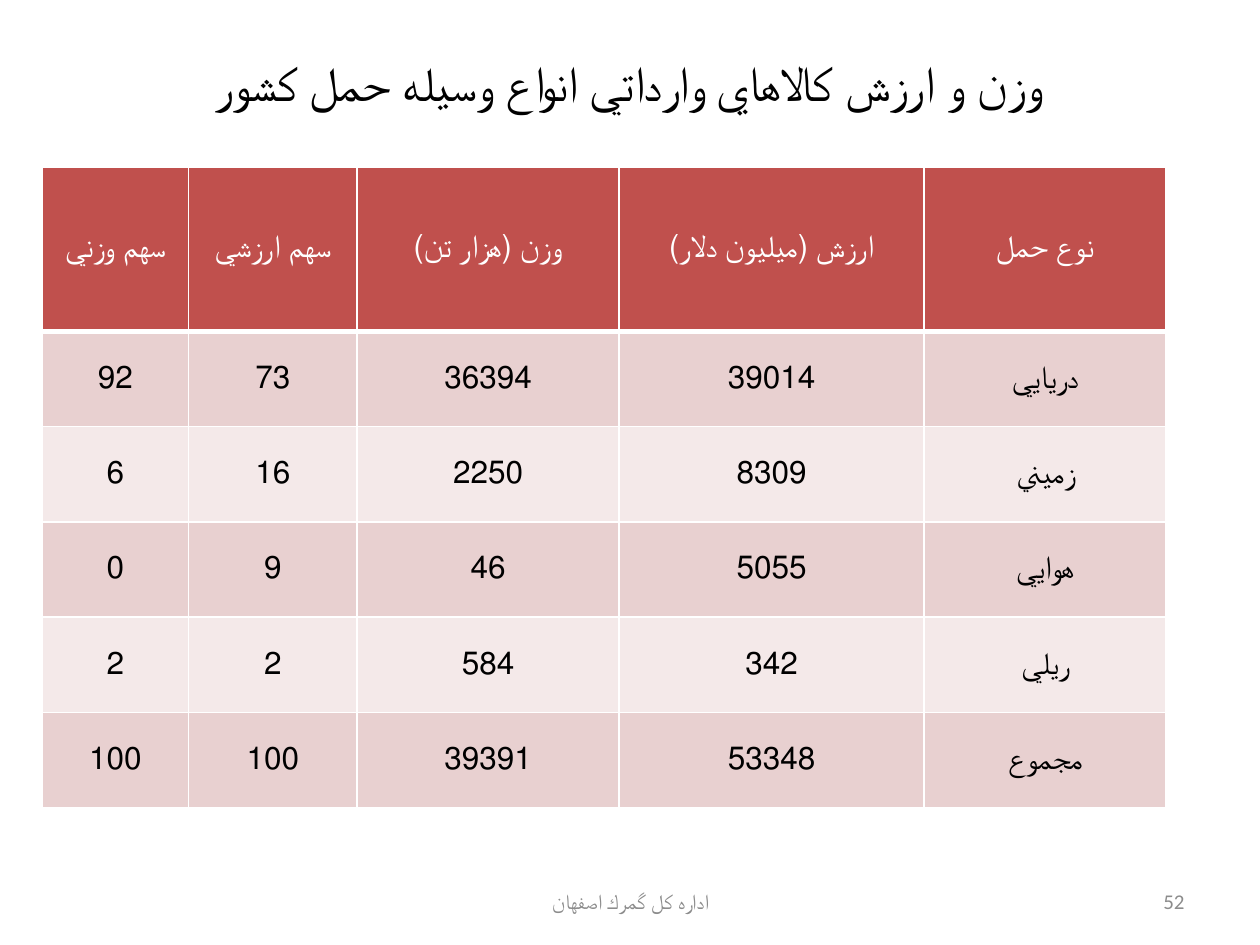
from dataclasses import dataclass

from lxml import etree
from pptx import Presentation
from pptx.dml.color import RGBColor
from pptx.enum.text import MSO_ANCHOR, PP_ALIGN
from pptx.oxml.ns import qn
from pptx.util import Cm, Pt

CENTER, RIGHT = PP_ALIGN.CENTER, PP_ALIGN.RIGHT
MIDDLE = MSO_ANCHOR.MIDDLE

COLORS = {
    "title": "000000",
    "body": "000000",
    "header_text": "FFFFFF",
    "header": "C0504D",
    "odd_row": "E8D0D0",
    "even_row": "F4E9E9",
    "border": "FFFFFF",
    "footer": "8C8C8C",
}


@dataclass
class TextStyle:
    font: str
    size: int
    color: str
    align: PP_ALIGN = CENTER
    rtl: bool = False
    line_spacing: float = 1.0


@dataclass
class Label:
    text: str
    left: float
    top: float
    width: float
    height: float
    style: TextStyle


TITLE_STYLE = TextStyle("Calibri", 28, "title", rtl=True)
FOOTER_STYLE = TextStyle("Calibri", 12, "footer")
NUMBER_STYLE = TextStyle("Calibri", 12, "footer", RIGHT)
HEADER_STYLE = TextStyle("Arial", 18, "header_text", rtl=True, line_spacing=0.85)
BODY_STYLE = TextStyle("Arial", 18, "body", rtl=True)

LABELS = [
    Label("وزن و ارزش كالاهاي وارداتي انواع وسيله حمل كشور",
          1.27, 0.76, 22.86, 1.78, TITLE_STYLE),
    Label("52", 18.21, 17.65, 5.92, 1.02, NUMBER_STYLE),
    Label("اداره كل گمرك اصفهان", 8.69, 17.65, 8.05, 1.02, FOOTER_STYLE),
]

TRANSPORT_ROWS = [
    ["سهم وزني", "سهم ارزشي", "وزن (هزار تن)", "ارزش (ميليون دلار)", "نوع حمل"],
    ["92", "73", "36394", "39014", "دريايي"],
    ["6", "16", "2250", "8309", "زميني"],
    ["0", "9", "46", "5055", "هوايي"],
    ["2", "2", "584", "342", "ريلي"],
    ["100", "100", "39391", "53348", "مجموع"],
]
COLUMN_WIDTHS = [2.95, 3.4, 5.28, 6.15, 4.88]
HEADER_HEIGHT, ROW_HEIGHT = 3.3, 1.92
TABLE_LEFT, TABLE_TOP = 0.85, 3.38


def rgb(name: str) -> RGBColor:
    return RGBColor.from_string(COLORS[name])


def write_text(frame, text: str, style: TextStyle) -> None:
    paragraph = frame.paragraphs[0]
    paragraph.text = text
    paragraph.alignment = style.align
    paragraph.line_spacing = style.line_spacing
    font = paragraph.font
    font.name, font.size, font.bold = style.font, Pt(style.size), False
    font.color.rgb = rgb(style.color)
    if style.rtl:
        paragraph._p.get_or_add_pPr().set("rtl", "1")


def draw_label(slide, label: Label) -> None:
    box = slide.shapes.add_textbox(
        Cm(label.left), Cm(label.top), Cm(label.width), Cm(label.height))
    box.text_frame.word_wrap = True
    box.text_frame.vertical_anchor = MIDDLE
    write_text(box.text_frame, label.text, label.style)


def set_borders(cell, bottom_width: int, top_width: int) -> None:
    properties = cell._tc.get_or_add_tcPr()
    widths = {"lnL": 1, "lnR": 1, "lnT": top_width, "lnB": bottom_width}
    for position, (side, width) in enumerate(widths.items()):
        line = etree.Element(qn(f"a:{side}"), w=str(Pt(width)))
        fill = etree.SubElement(line, qn("a:solidFill"))
        etree.SubElement(fill, qn("a:srgbClr"), val=COLORS["border"])
        properties.insert(position, line)


def draw_table(slide) -> None:
    row_heights = [HEADER_HEIGHT] + [ROW_HEIGHT] * (len(TRANSPORT_ROWS) - 1)
    table = slide.shapes.add_table(
        len(TRANSPORT_ROWS), len(COLUMN_WIDTHS), Cm(TABLE_LEFT), Cm(TABLE_TOP),
        Cm(sum(COLUMN_WIDTHS)), Cm(sum(row_heights))).table
    for column, width in zip(table.columns, COLUMN_WIDTHS):
        column.width = Cm(width)
    for row, height in zip(table.rows, row_heights):
        row.height = Cm(height)
    for row_index, values in enumerate(TRANSPORT_ROWS):
        is_header = row_index == 0
        band = "header" if is_header else "odd_row" if row_index % 2 else "even_row"
        for column_index, value in enumerate(values):
            cell = table.cell(row_index, column_index)
            cell.vertical_anchor = MIDDLE
            cell.fill.solid()
            cell.fill.fore_color.rgb = rgb(band)
            write_text(cell.text_frame, value, HEADER_STYLE if is_header else BODY_STYLE)
            set_borders(cell, bottom_width=3 if is_header else 1,
                        top_width=3 if row_index == 1 else 1)


def main() -> None:
    presentation = Presentation()
    presentation.slide_width, presentation.slide_height = Cm(25.4), Cm(19.05)
    slide = presentation.slides.add_slide(presentation.slide_layouts[6])
    draw_table(slide)
    for label in LABELS:
        draw_label(slide, label)
    presentation.save("out.pptx")


if __name__ == "__main__":
    main()
